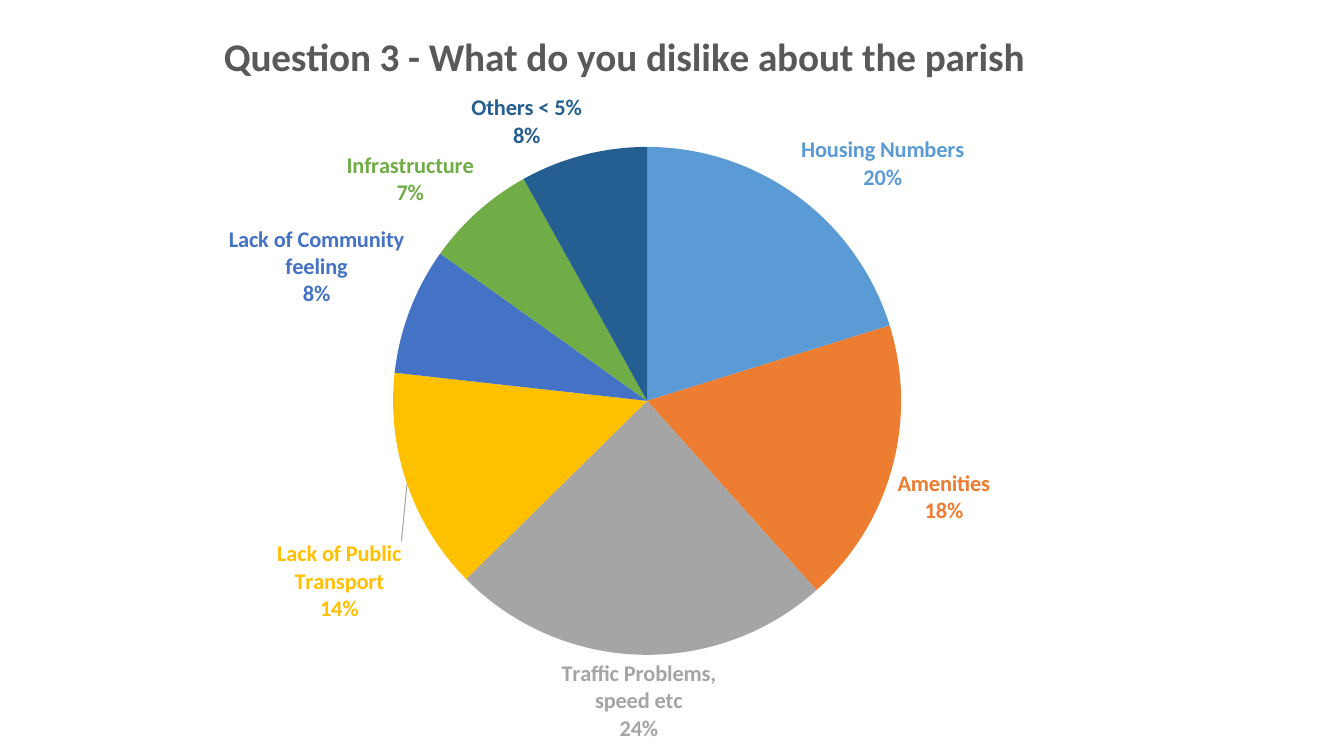
import pptx
import pptx.chart.data
import pptx.dml.color
import pptx.enum.chart
import pptx.util
from lxml import etree
from pptx.oxml.ns import qn

RGB = pptx.dml.color.RGBColor
TITLE_GREY = RGB(0x59, 0x59, 0x59)
LINE_GREY = RGB(0xA6, 0xA6, 0xA6)

FONT = "Calibri"
PX = 9071  # EMU per px at 100.8 px to the inch
CHART_LEFT, CHART_TOP, CHART_W, CHART_H = 91, 0, 1048, 756
PIE_LEFT, PIE_TOP, PIE_SIZE = 393, 147, 508

TITLE = "Question 3 - What do you dislike about the parish"
ANSWERS = [
    ("Housing Numbers", 20, RGB(0x5B, 0x9B, 0xD5)),
    ("Amenities", 18, RGB(0xED, 0x7D, 0x31)),
    ("Traffic Problems, speed etc", 24, RGB(0xA5, 0xA5, 0xA5)),
    ("Lack of Public Transport", 14, RGB(0xFF, 0xC0, 0x00)),
    ("Lack of Community feeling", 8, RGB(0x44, 0x72, 0xC4)),
    ("Infrastructure", 7, RGB(0x70, 0xAD, 0x47)),
    ("Others < 5%", 8, RGB(0x25, 0x5E, 0x91)),
]
LABEL_SHIFTS = {"Lack of Public Transport": (0, 55)}  # px from the default place


def px(n):
    return pptx.util.Emu(n * PX)


def set_layout(parent, index, **values):
    """Give a chart part a manual layout, as fractions of the chart."""
    for old in parent.findall(qn("c:layout")):
        parent.remove(old)
    layout = etree.Element(qn("c:layout"))
    manual = etree.SubElement(layout, qn("c:manualLayout"))
    for tag, value in values.items():
        etree.SubElement(manual, qn("c:" + tag)).set("val", str(value))
    parent.insert(index, layout)


def set_font(font, size, color):
    font.name = FONT
    font.size = pptx.util.Pt(size)
    font.bold = True
    font.color.rgb = color


def add_pie(slide):
    data = pptx.chart.data.CategoryChartData()
    data.categories = [name for name, _, _ in ANSWERS]
    data.add_series("Series 1", [value for _, value, _ in ANSWERS])
    frame = slide.shapes.add_chart(
        pptx.enum.chart.XL_CHART_TYPE.PIE,
        px(CHART_LEFT), px(CHART_TOP), px(CHART_W), px(CHART_H), data)
    chart = frame.chart
    chart.has_legend = False
    chart.font.name = FONT
    chart.font.size = pptx.util.Pt(10)
    plot_area = chart.plots[0]._element.getparent()
    set_layout(plot_area, 0, layoutTarget="inner", xMode="edge", yMode="edge",
               x=round((PIE_LEFT - CHART_LEFT) / CHART_W, 4),
               y=round((PIE_TOP - CHART_TOP) / CHART_H, 4),
               w=round(PIE_SIZE / CHART_W, 4), h=round(PIE_SIZE / CHART_H, 4))
    return chart


def add_title(chart):
    chart.has_title = True
    tf = chart.chart_title.text_frame
    tf.text = TITLE
    set_font(tf.paragraphs[0].runs[0].font, 28, TITLE_GREY)
    set_layout(chart.chart_title._element, 1, xMode="edge", yMode="edge",
               x=0.12, y=0.03)


def show_name_and_percent(labels):
    """Turn on category and percentage, on separate lines."""
    for tag, value in (("showVal", 0), ("showCatName", 1), ("showPercent", 1)):
        labels.find(qn("c:" + tag)).set("val", str(value))
    separator = etree.Element(qn("c:separator"))
    separator.text = "\n"
    last = labels.find(qn("c:showBubbleSize"))
    if last is None:
        last = labels.find(qn("c:showPercent"))
    last.addnext(separator)


def format_slices(chart):
    outside = pptx.enum.chart.XL_LABEL_POSITION.OUTSIDE_END
    series = chart.plots[0].series[0]
    # Labels of the whole series
    labels = series.data_labels
    labels.position = outside
    set_font(labels.font, 16, ANSWERS[0][2])
    show_name_and_percent(labels._element)
    # Each slice and its label in the same colour
    for i, (name, _, color) in enumerate(ANSWERS):
        point = series.points[i]
        point.format.fill.solid()
        point.format.fill.fore_color.rgb = color
        set_font(point.data_label.font, 16, color)
        point.data_label.position = outside
        label = labels._element.findall(qn("c:dLbl"))[i]
        show_name_and_percent(label)
        if name in LABEL_SHIFTS:
            dx, dy = LABEL_SHIFTS[name]
            set_layout(label, 1, x=round(dx / CHART_W, 4),
                       y=round(dy / CHART_H, 4))
    add_leader_lines(labels._element)


def add_leader_lines(labels):
    for tag in ("c:showLeaderLines", "c:leaderLines"):
        for old in labels.findall(qn(tag)):
            labels.remove(old)
    etree.SubElement(labels, qn("c:showLeaderLines")).set("val", "1")
    leader = etree.SubElement(labels, qn("c:leaderLines"))
    sp_pr = etree.SubElement(leader, qn("c:spPr"))
    ln = etree.SubElement(sp_pr, qn("a:ln"), w="9525")
    fill = etree.SubElement(ln, qn("a:solidFill"))
    etree.SubElement(fill, qn("a:srgbClr"), val=str(LINE_GREY))


def main():
    prs = pptx.Presentation()
    prs.slide_width = pptx.util.Inches(13.33)
    prs.slide_height = pptx.util.Inches(7.5)
    slide = prs.slides.add_slide(prs.slide_layouts[6])
    chart = add_pie(slide)
    add_title(chart)
    format_slices(chart)
    prs.save("out.pptx")


if __name__ == "__main__":
    main()
